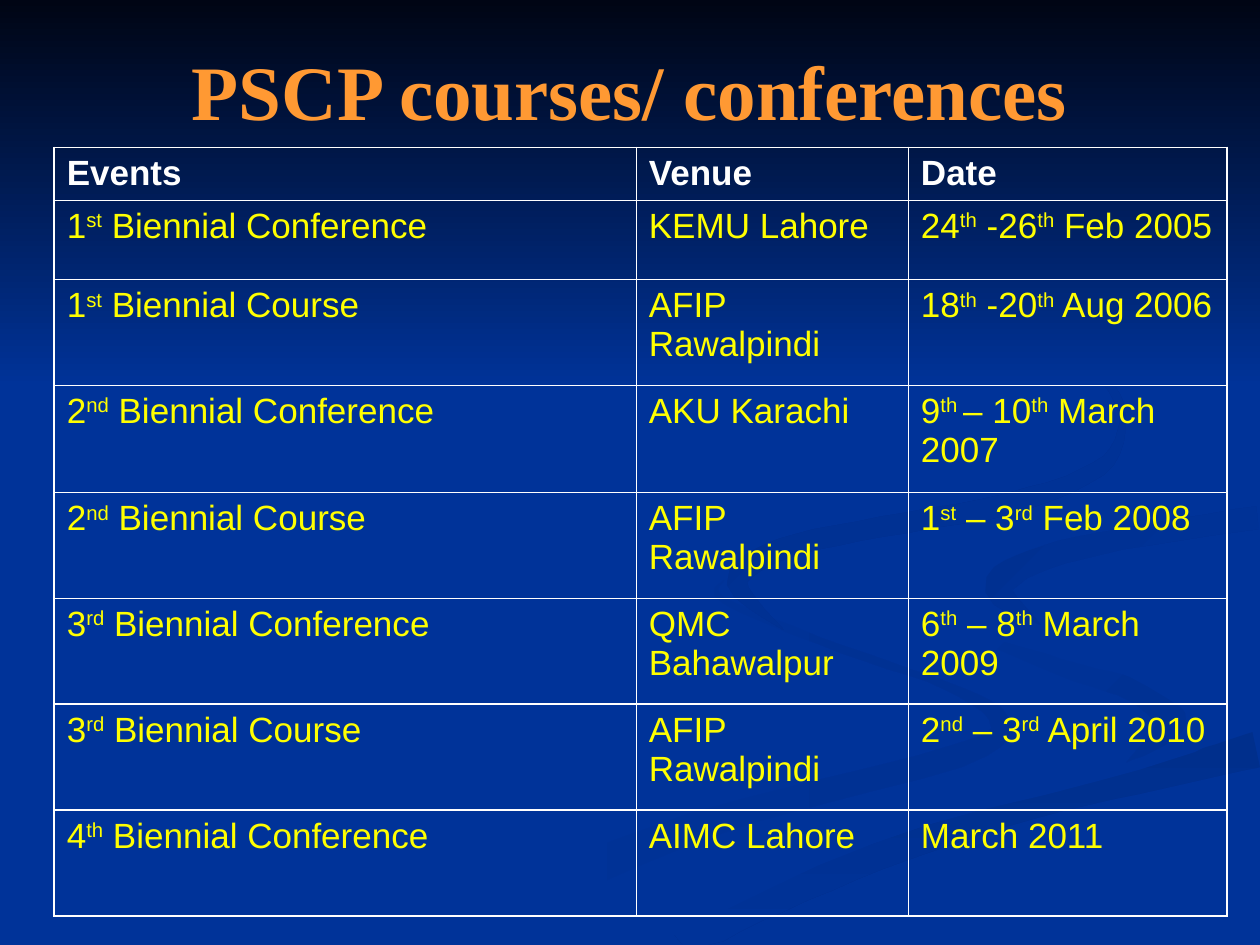
from dataclasses import dataclass
from math import hypot

from lxml.etree import SubElement
from pptx import Presentation
from pptx.dml.color import RGBColor
from pptx.enum.shapes import MSO_SHAPE
from pptx.enum.text import MSO_ANCHOR, PP_ALIGN
from pptx.oxml.ns import qn
from pptx.util import Inches, Pt

SLIDE_WIDTH, SLIDE_HEIGHT = 10, 7.5
BLUE, NAVY, WHITE, YELLOW, ORANGE = "003399", "000514", "FFFFFF", "FFFF00", "FF9933"
UNITS_PER_INCH = 100
STEPS_PER_BEND = 5

COLUMN_WIDTHS = [4.62, 2.16, 2.53]
ROW_HEIGHTS = [0.42, 0.63, 0.84, 0.85] + [0.84] * 4
HEADINGS = ("Events", "Venue", "Date")
EVENTS = [
    ("1^st^ Biennial Conference", "KEMU Lahore", "24^th^ -26^th^ Feb 2005"),
    ("1^st^ Biennial Course", "AFIP Rawalpindi", "18^th^ -20^th^ Aug 2006"),
    ("2^nd^ Biennial Conference", "AKU Karachi", "9^th ^– 10^th^ March 2007"),
    ("2^nd^ Biennial Course", "AFIP Rawalpindi", "1^st^ – 3^rd^ Feb 2008"),
    ("3^rd^ Biennial Conference", "QMC Bahawalpur", "6^th^ – 8^th^ March 2009"),
    ("3^rd^ Biennial Course", "AFIP Rawalpindi", "2^nd^ – 3^rd^ April 2010"),
    ("4^th^ Biennial Conference", "AIMC Lahore", "March 2011"),
]


@dataclass
class Ribbon:
    """A swirl: gradient colours, clockwise angle and bends as (x, y, thickness)."""
    colours: tuple
    angle: int
    bends: list


LEFT_SWIRL = Ribbon((BLUE, "003193"), 0, [
    (5.75, 4.6, 0), (5.75, 4.77, 0.05), (6.7, 5.16, 0.06), (7.5, 5.44, 0.06),
    (7.93, 5.72, 0.14), (7.6, 6.0, 0.18), (5.5, 6.57, 0.23), (3.3, 7.49, 0.4)])
INNER_LOOP = Ribbon((BLUE, "003193"), 45, [
    (7.24, 4.64, 0), (7.37, 4.86, 0.06), (8.4, 5.29, 0.13),
    (9.0, 5.48, 0.18), (9.3, 5.75, 0.25), (8.94, 6.05, 0)])
LOWER_STREAK = Ribbon(("002F8C", BLUE), 90, [
    (9.98, 5.95, 0.28), (9.03, 6.2, 0.2), (7.97, 6.47, 0.18),
    (6.96, 6.8, 0.22), (5.99, 7.2, 0.25), (5.35, 7.49, 0.35)])
MAIN_CURVE = Ribbon((BLUE, BLUE), 0, [
    (9.98, 3.95, 0.15), (8.7, 4.15, 0.14), (7.9, 4.33, 0.22), (7.53, 4.65, 0.5),
    (8.1, 5.02, 0.22), (9.0, 5.28, 0.2), (9.6, 5.65, 0.35), (9.03, 6.07, 0.08),
    (6.9, 6.64, 0.12), (4.95, 7.49, 0.25)])
RIGHT_HOOK = Ribbon(("003091", BLUE), 45, [
    (9.98, 4.11, 0.18), (8.9, 4.28, 0.17), (8.2, 4.46, 0.2),
    (7.93, 4.68, 0.22), (8.26, 4.96, 0)])
UPPER_CURL = Ribbon(("002F8E", BLUE), 45, [
    (7.62, 2.33, 0), (8.2, 2.62, 0.04), (8.75, 3.0, 0.07), (8.91, 3.35, 0.05),
    (8.72, 3.72, 0.12), (8.0, 4.0, 0.17), (7.0, 4.18, 0.16),
    (6.2, 4.36, 0.17), (5.85, 4.63, 0.16), (6.22, 5.0, 0)])
RIBBONS = [LEFT_SWIRL, INNER_LOOP, LOWER_STREAK, MAIN_CURVE, RIGHT_HOOK, UPPER_CURL]


def rgb(hex_value):
    """Turn a hex string into a colour."""
    return RGBColor.from_string(hex_value)


def paint(shape, colours, angle):
    """Fill a shape with a clockwise two-colour gradient and no outline."""
    shape.shadow.inherit = False
    shape.line.fill.background()
    shape.fill.gradient()
    shape.fill.gradient_angle = -angle % 360
    for stop, colour in zip(shape.fill.gradient_stops, colours):
        stop.color.rgb = rgb(colour)


def spline(before, start, end, after, t):
    """Blend four values into a Catmull-Rom curve running from start to end."""
    return start + t / 2 * (end - before + t * (
        2 * before - 5 * start + 4 * end - after
        + t * (3 * (start - end) + after - before)))


def smooth(bends):
    """Return closely spaced bends along a curve through the given ones."""
    padded = [bends[0], *bends, bends[-1]]
    curve = [tuple(spline(*values, step / STEPS_PER_BEND) for values in zip(*window))
             for window in zip(padded, padded[1:], padded[2:], padded[3:])
             for step in range(STEPS_PER_BEND)]
    return curve + [bends[-1]]


def ribbon_outline(bends):
    """Step half the thickness to both sides of the curve, within the slide."""
    curve = smooth(bends)
    sides = {1: [], -1: []}
    neighbours = zip([curve[0]] + curve[:-1], curve, curve[1:] + [curve[-1]])
    for previous, (x, y, thickness), following in neighbours:
        dx, dy = following[0] - previous[0], following[1] - previous[1]
        reach = max(thickness, 0) / 2 / hypot(dx, dy)
        for sign, points in sides.items():
            points.append((min(x - sign * dy * reach, SLIDE_WIDTH),
                           min(y + sign * dx * reach, SLIDE_HEIGHT)))
    return sides[1] + sides[-1][::-1]


def add_ribbon(slide, ribbon):
    """Draw one background ribbon."""
    outline = [(round(x * UNITS_PER_INCH), round(y * UNITS_PER_INCH))
               for x, y in ribbon_outline(ribbon.bends)]
    builder = slide.shapes.build_freeform(*outline[0], scale=Inches(1) / UNITS_PER_INCH)
    builder.add_line_segments(outline[1:], close=True)
    paint(builder.convert_to_shape(), ribbon.colours, ribbon.angle)


def add_top_shade(slide):
    """Darken the upper part of the slide."""
    shade = slide.shapes.add_shape(MSO_SHAPE.RECTANGLE, 0, 0, Inches(SLIDE_WIDTH),
                                   Inches(SLIDE_HEIGHT * 0.41))
    paint(shade, (NAVY, BLUE), 90)


def write(paragraph, text, font_name, size, colour, bold):
    """Add runs, raising the parts enclosed in carets."""
    for index, part in enumerate(text.split("^")):
        run = paragraph.add_run()
        run.text = part
        run.font.name = font_name
        run.font.size = Pt(size)
        run.font.bold = bold
        run.font.color.rgb = rgb(colour)
        if index % 2:
            run.font._element.set("baseline", "30000")


def add_borders(cell, colour):
    """Draw a one-point line on every side of a cell."""
    properties = cell._tc.get_or_add_tcPr()
    for position, side in enumerate(("lnL", "lnR", "lnT", "lnB")):
        border = SubElement(properties, qn(f"a:{side}"), w=str(Pt(1)))
        fill = SubElement(border, qn("a:solidFill"))
        SubElement(fill, qn("a:srgbClr"), val=colour)
        properties.insert(position, border)


def fill_row(row, texts, colour, bold):
    """Write one text into each clear, bordered cell of a row."""
    for cell, text in zip(row.cells, texts):
        cell.fill.background()
        add_borders(cell, WHITE)
        write(cell.text_frame.paragraphs[0], text, "Arial", 20, colour, bold)


def add_events_table(slide):
    """Add the table of events, venues and dates."""
    table = slide.shapes.add_table(
        len(ROW_HEIGHTS), len(COLUMN_WIDTHS), Inches(0.43), Inches(1.17),
        Inches(sum(COLUMN_WIDTHS)), Inches(sum(ROW_HEIGHTS))).table
    table.first_row = table.horz_banding = False
    for column, width in zip(table.columns, COLUMN_WIDTHS):
        column.width = Inches(width)
    for row, height in zip(table.rows, ROW_HEIGHTS):
        row.height = Inches(height)
    heading_row, *event_rows = table.rows
    fill_row(heading_row, HEADINGS, WHITE, True)
    for row, event in zip(event_rows, EVENTS):
        fill_row(row, event, YELLOW, False)


def add_title(slide, text):
    """Add the centred slide title."""
    frame = slide.shapes.add_textbox(Inches(SLIDE_WIDTH * 0.05), Inches(0.17),
                                     Inches(SLIDE_WIDTH * 0.9), Inches(1.08)).text_frame
    frame.word_wrap = True
    frame.vertical_anchor = MSO_ANCHOR.MIDDLE
    frame.paragraphs[0].alignment = PP_ALIGN.CENTER
    write(frame.paragraphs[0], text, "Times New Roman", 44, ORANGE, True)


def main():
    """Build and save the slide."""
    deck = Presentation()
    deck.slide_width, deck.slide_height = Inches(SLIDE_WIDTH), Inches(SLIDE_HEIGHT)
    slide = deck.slides.add_slide(deck.slide_layouts[6])
    slide.background.fill.solid()
    slide.background.fill.fore_color.rgb = rgb(BLUE)
    for ribbon in RIBBONS:
        add_ribbon(slide, ribbon)
    add_top_shade(slide)
    add_events_table(slide)
    add_title(slide, "PSCP courses/ conferences")
    deck.save("out.pptx")


if __name__ == "__main__":
    main()
